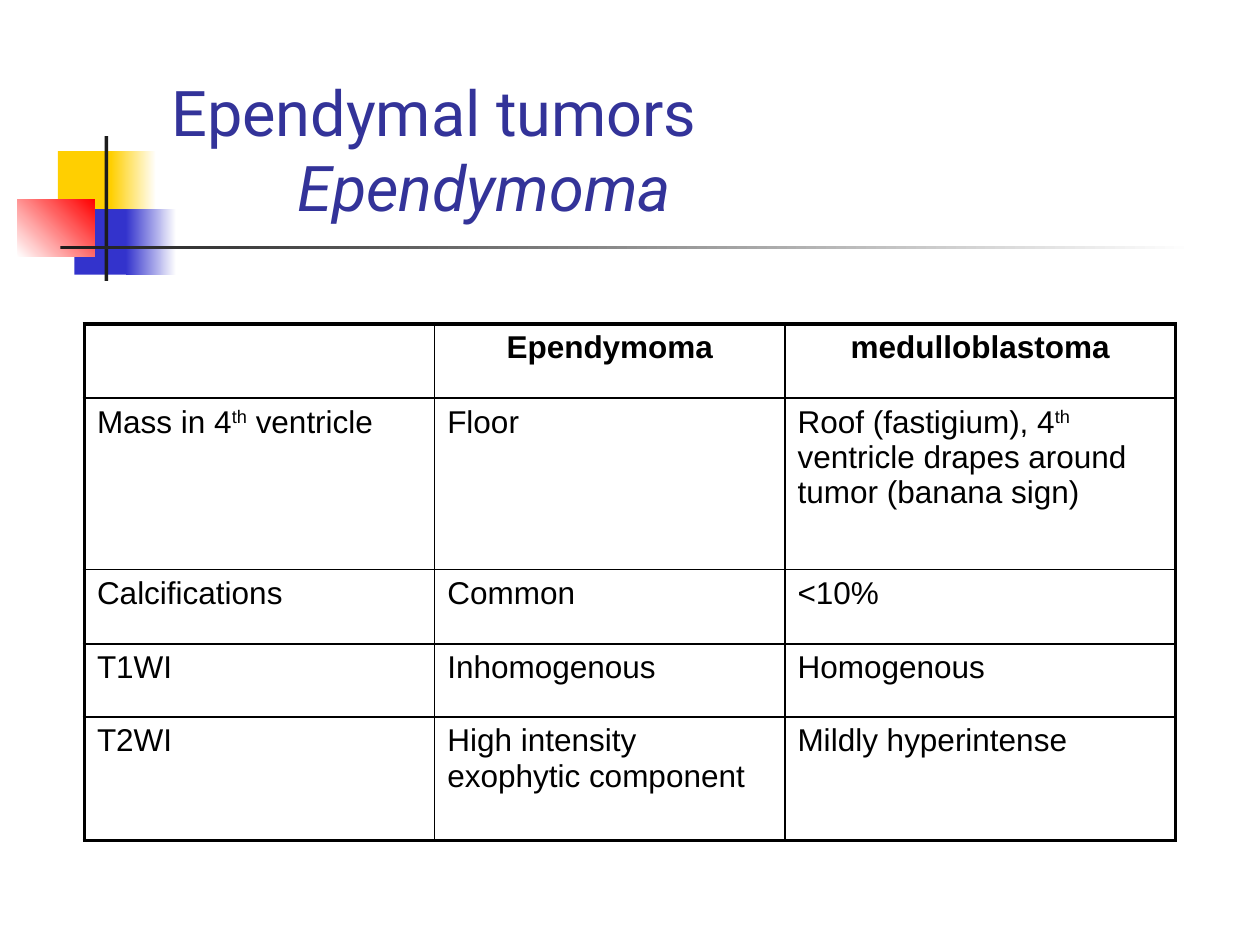
"""Build a slide comparing ependymoma with medulloblastoma."""
from lxml.etree import SubElement as Sub
from pptx import Presentation
from pptx.dml.color import RGBColor as RGB
from pptx.enum.shapes import MSO_SHAPE as Shape
from pptx.enum.text import MSO_ANCHOR as Anchor, MSO_AUTO_SIZE as Auto, PP_ALIGN as Align
from pptx.oxml.ns import qn
from pptx.util import Inches, Pt

WHITE = RGB(0xFF, 0xFF, 0xFF)
BLACK = RGB(0, 0, 0)
GOLD = RGB(0xFF, 0xCF, 0x01)
BLUE = RGB(0x33, 0x33, 0xCC)
RED = RGB(0xFF, 0, 0)
DARK = RGB(0x1C, 0x1C, 0x1C)
NAVY = RGB(0x33, 0x33, 0x99)

COLS = [2.78, 2.78, 3.1]
ROWS = [0.59, 1.36, 0.59, 0.58, 0.98]
CELLS = [
    ["", "Ependymoma", "medulloblastoma"],
    ["Mass in 4^th^ ventricle", "Floor",
     "Roof (fastigium), 4^th^ ventricle drapes around tumor (banana sign)"],
    ["Calcifications", "Common", "<10%"],
    ["T1WI", "Inhomogenous", "Homogenous"],
    ["T2WI", "High intensity exophytic component", "Mildly hyperintense"],
]
BLOCKS = [
    ((0.46, 1.2, 0.48, 0.52), [GOLD], 0),
    ((0.88, 1.2, 0.36, 0.52), [GOLD, WHITE], 0),
    ((0.59, 1.66, 0.46, 0.52), [BLUE], 0),
    ((1, 1.66, 0.4, 0.52), [BLUE, WHITE], 0),
    ((0.14, 1.58, 0.61, 0.46), [WHITE, RED], 45),
    ((0.83, 1.08, 0.03, 1.15), [DARK], 0),
    ((0.48, 1.95, 9, 0.03), [DARK, WHITE], 0),
]


def edge(cell, side, width):
    line = Sub(cell._tc.get_or_add_tcPr(), qn(f"a:ln{side}"), w=str(Pt(width)))
    fill = Sub(line, qn("a:solidFill"))
    Sub(fill, qn("a:srgbClr"), val=str(BLACK))


deck = Presentation()
deck.slide_width, deck.slide_height = Inches(10), Inches(7.5)
slide = deck.slides.add_slide(deck.slide_layouts[5])

for box, tones, angle in BLOCKS:
    block = slide.shapes.add_shape(Shape.RECTANGLE, *map(Inches, box))
    block.shadow.inherit = False
    block.line.fill.background()
    if len(tones) == 1:
        block.fill.solid()
        block.fill.fore_color.rgb = tones[0]
    else:
        block.fill.gradient()
        block.fill.gradient_angle = angle
        for stop, tone in zip(block.fill.gradient_stops, tones):
            stop.color.rgb = tone

title = slide.shapes.title
title.left, title.top, title.width, title.height = map(Inches, (1.26, 0.23, 8.52, 1.6))
frame = title.text_frame
frame.auto_size = Auto.NONE
frame.word_wrap = True
frame.vertical_anchor = Anchor.BOTTOM
para = frame.paragraphs[0]
para.text = "Ependymal tumors\v\t\tEpendymoma"
para.alignment = Align.LEFT
for run in para.runs:
    run.font.name, run.font.size = "Roboto", Pt(36)
    run.font.color.rgb = NAVY
para.runs[-1].font.italic = True

area = map(Inches, (0.67, 2.57, sum(COLS), sum(ROWS)))
table = slide.shapes.add_table(len(ROWS), len(COLS), *area).table
table.first_row = table.horz_banding = False
for col, width in zip(table.columns, COLS):
    col.width = Inches(width)
for row, height in zip(table.rows, ROWS):
    row.height = Inches(height)

for r, texts in enumerate(CELLS):
    for c, text in enumerate(texts):
        cell = table.cell(r, c)
        outer = {"L": c == 0, "R": c == len(COLS) - 1, "T": r == 0, "B": r == len(ROWS) - 1}
        for side, thick in outer.items():
            edge(cell, side, 2.25 if thick else 1)
        cell.fill.background()
        para = cell.text_frame.paragraphs[0]
        para.alignment = Align.LEFT if r else Align.CENTER
        for n, part in enumerate(text.split("^") if text else []):
            run = para.add_run()
            run.text = part
            run.font.name, run.font.size = "Arial", Pt(18)
            run.font.bold = r == 0
            run.font.color.rgb = BLACK
            if n % 2:
                run._r.get_or_add_rPr().set("baseline", "30000")

deck.save("out.pptx")
